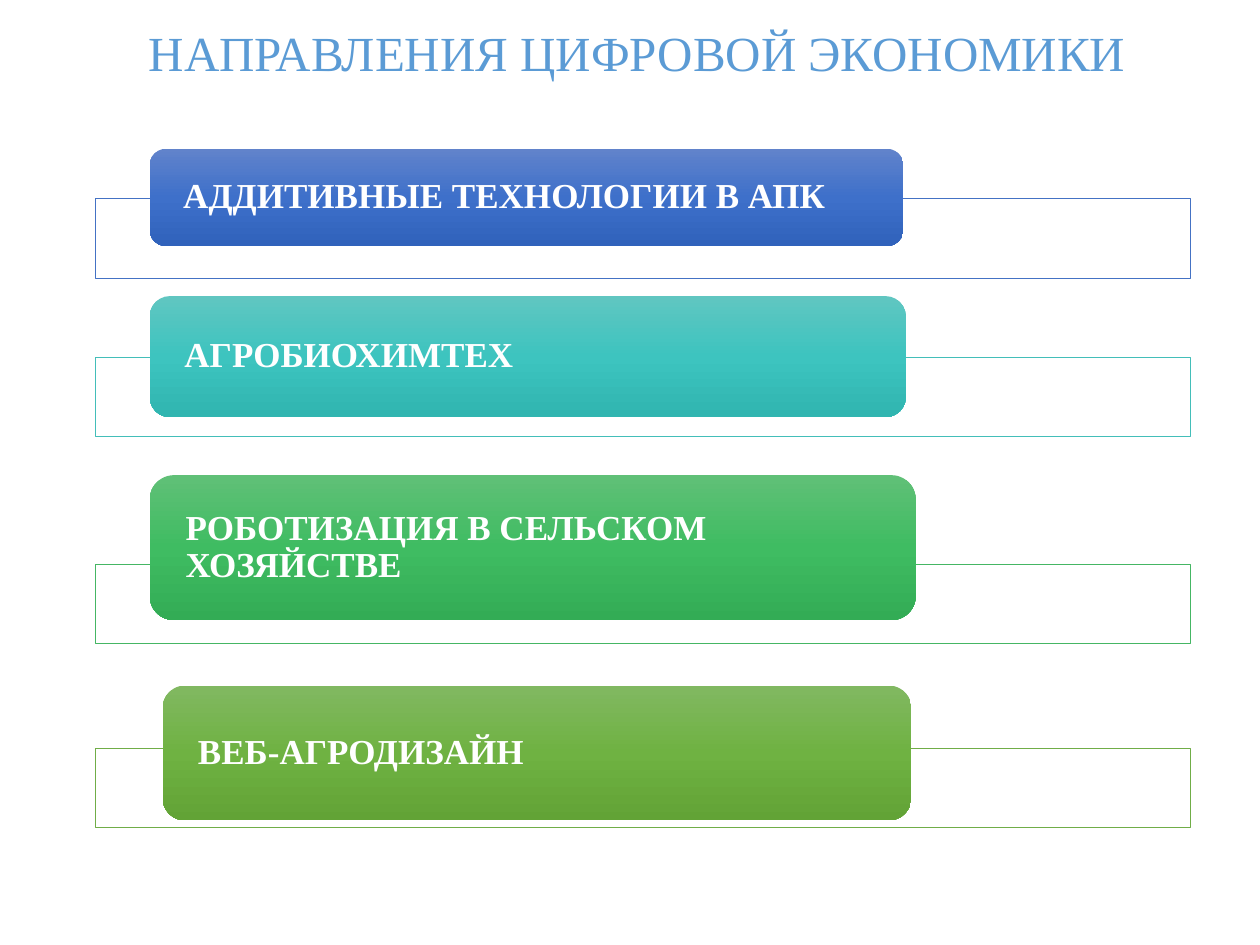
from copy import deepcopy

from pptx import Presentation
from pptx.dml.color import RGBColor
from pptx.enum.shapes import MSO_SHAPE
from pptx.enum.text import MSO_ANCHOR, PP_ALIGN
from pptx.oxml.ns import qn
from pptx.util import Cm, Pt

RECT, ROUNDED = MSO_SHAPE.RECTANGLE, MSO_SHAPE.ROUNDED_RECTANGLE
MIDDLE = MSO_ANCHOR.MIDDLE
LEFT, CENTER = PP_ALIGN.LEFT, PP_ALIGN.CENTER

FONT = "Times New Roman"
COLORS = {"title": "5B9BD5", "white": "FFFFFF"}
TITLE = "НАПРАВЛЕНИЯ ЦИФРОВОЙ ЭКОНОМИКИ"

# label, frame top, label box (left, top, width, height) in cm, line, gradient
DIRECTIONS = [
    ("АДДИТИВНЫЕ ТЕХНОЛОГИИ В АПК", 4.01, (3.02, 3.0, 15.19, 1.96),
     "4472C4", ("6183CB", "3E70CA", "3062BB")),
    ("АГРОБИОХИМТЕХ", 7.21, (3.02, 5.97, 15.24, 2.44),
     "43BEB9", ("60C6C1", "3DC4BF", "30B5B0")),
    ("РОБОТИЗАЦИЯ В СЕЛЬСКОМ ХОЗЯЙСТВЕ", 11.38, (3.02, 9.58, 15.44, 2.92),
     "45B664", ("60C077", "3FBC62", "33AC55")),
    ("ВЕБ-АГРОДИЗАЙН", 15.09, (3.28, 13.82, 15.09, 2.72),
     "70AD47", ("81B861", "6FB242", "62A336")),
]
FRAME_LEFT, FRAME_WIDTH, FRAME_HEIGHT = 1.93, 22.07, 1.6
LABEL_INSET = 0.58


def rgb(value):
    return RGBColor.from_string(value)


def add_box(slide, kind, box):
    s = slide.shapes.add_shape(kind, *(Cm(v) for v in box))
    s.shadow.inherit = False
    return s


def write(tf, text, size, color, align, bold=False):
    tf.word_wrap = True
    p = tf.paragraphs[0]
    p.text = text
    p.alignment = align
    font = p.runs[0].font
    font.name, font.size, font.bold = FONT, Pt(size), bold
    font.color.rgb = rgb(color)
    return p


def fill_gradient(s, colors):
    """Fill from top to bottom with evenly spaced colours."""
    s.fill.gradient()
    s.fill.gradient_angle = 270
    stops = s._element.spPr.find(qn("a:gradFill")).find(qn("a:gsLst"))
    while len(stops) < len(colors):
        stops.append(deepcopy(stops[-1]))
    for i, (stop, color) in enumerate(zip(s.fill.gradient_stops, colors)):
        stop.position = i / (len(colors) - 1)
        stop.color.rgb = rgb(color)


def add_direction(slide, label, frame_top, label_box, line, gradient):
    frame = add_box(slide, RECT,
                    (FRAME_LEFT, frame_top, FRAME_WIDTH, FRAME_HEIGHT))
    frame.fill.solid()
    frame.fill.fore_color.rgb = rgb(COLORS["white"])
    frame.line.color.rgb = rgb(line)
    frame.line.width = Pt(0.5)

    s = add_box(slide, ROUNDED, label_box)
    fill_gradient(s, gradient)
    s.line.fill.background()
    tf = s.text_frame
    tf.margin_left = tf.margin_right = Cm(LABEL_INSET)
    tf.margin_top = tf.margin_bottom = 0
    tf.vertical_anchor = MIDDLE
    p = write(tf, label, 20, COLORS["white"], LEFT, bold=True)
    p.line_spacing = 0.9


def main():
    prs = Presentation()
    prs.slide_width, prs.slide_height = Cm(25.4), Cm(19.05)
    slide = prs.slides.add_slide(prs.slide_layouts[6])
    title = slide.shapes.add_textbox(Cm(1.93), Cm(0.33), Cm(21.82), Cm(1.45))
    write(title.text_frame, TITLE, 28, COLORS["title"], CENTER)
    for direction in DIRECTIONS:
        add_direction(slide, *direction)
    prs.save("out.pptx")


if __name__ == "__main__":
    main()
